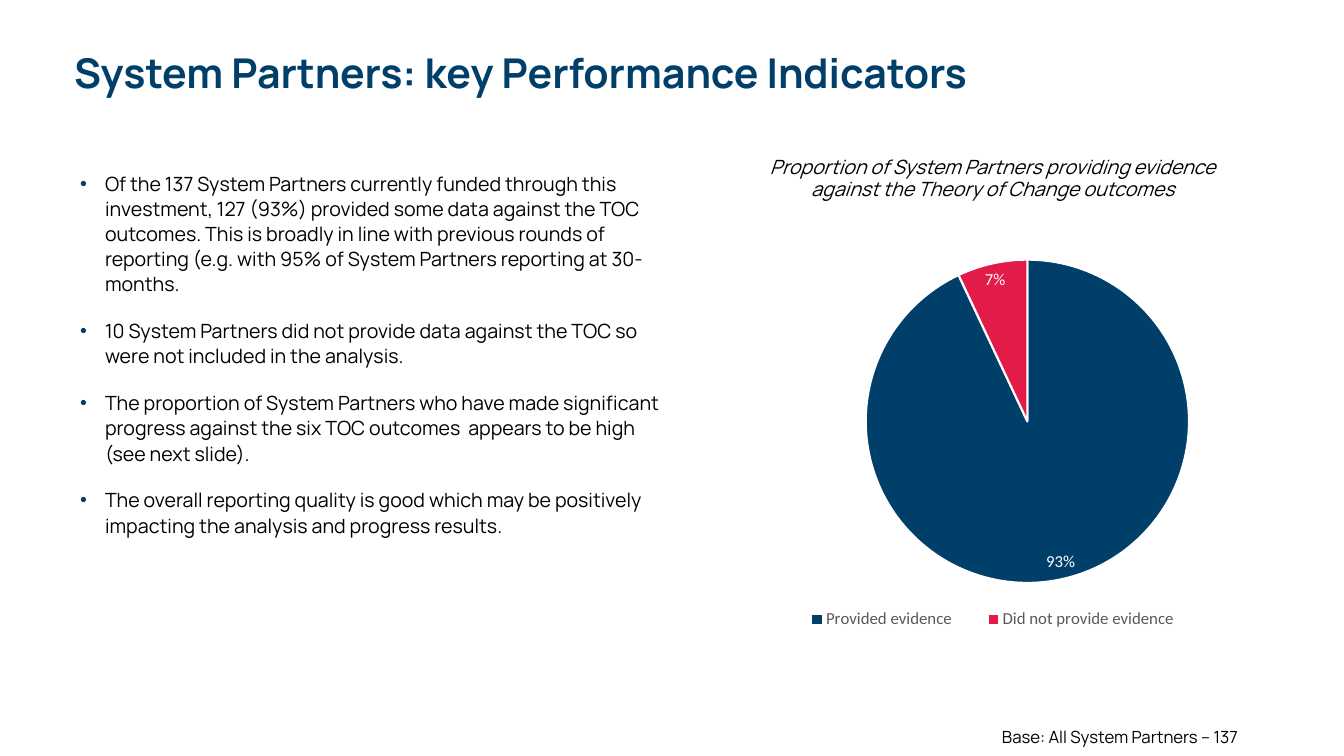
import dataclasses
import typing

import lxml.etree
import pptx
import pptx.chart.data
import pptx.dml.color
import pptx.enum.chart
import pptx.enum.text
import pptx.oxml.ns
import pptx.util

RGB = pptx.dml.color.RGBColor.from_string
ALIGN = pptx.enum.text.PP_ALIGN
ANCHOR = pptx.enum.text.MSO_ANCHOR
LABEL_POS = pptx.enum.chart.XL_LABEL_POSITION
EMU_PER_PX = 12192000 / 1344


@dataclasses.dataclass(frozen=True)
class Theme:
    navy: str = "003F69"
    bullet: str = "004069"
    red: str = "E31B49"
    black: str = "000000"
    grey: str = "595959"
    white: str = "FFFFFF"
    text_font: str = "Manrope"
    chart_font: str = "Calibri"
    title_size: float = 29.3
    body_size: float = 14
    small_size: float = 12


THEME = Theme()


@dataclasses.dataclass(frozen=True)
class Box:
    left: int
    top: int
    width: int
    height: int

    def emu(self) -> list[int]:
        return [px(v) for v in dataclasses.astuple(self)]


@dataclasses.dataclass(frozen=True)
class TextBlock:
    box: Box
    paragraphs: tuple[str, ...]
    size: float
    line_spacing: float
    color: str = THEME.black
    bold: bool = False
    italic: bool = False
    align: ALIGN = ALIGN.LEFT
    anchor: ANCHOR = ANCHOR.TOP
    inset: tuple[int, int] = (0, 0)
    bulleted: bool = False
    before: float = 0
    after: float = 0


@dataclasses.dataclass(frozen=True)
class Slice:
    name: str
    value: int
    color: str


BLOCKS = (
    TextBlock(Box(64, 47, 1094, 56), ("System Partners: key Performance Indicators",),
              THEME.title_size, 0.9, color=THEME.navy, bold=True,
              anchor=ANCHOR.MIDDLE, inset=(10, 5)),
    TextBlock(Box(80, 170, 592, 487), (
        "Of the 137 System Partners currently funded through this investment, 127 (93%) "
        "provided some data against the TOC outcomes. This is broadly in line with previous "
        "rounds of reporting (e.g. with 95% of System Partners reporting at 30-months.",
        "10 System Partners did not provide data against the TOC so were not included in "
        "the analysis.",
        "The proportion of System Partners who have made significant progress against the "
        "six TOC outcomes  appears to be high (see next slide).",
        "The overall reporting quality is good which may be positively impacting the "
        "analysis and progress results.",
    ), THEME.body_size, 1.07, bulleted=True, before=7.5, after=8),
    TextBlock(Box(728, 153, 530, 53),
              ("Proportion of System Partners providing evidence against the Theory of "
               "Change outcomes",),
              THEME.body_size, 0.9, italic=True, align=ALIGN.CENTER, inset=(10, 5)),
    TextBlock(Box(1002, 725, 318, 21), ("Base: All System Partners – 137",),
              THEME.small_size, 1.1),
)

CHART_BOX = Box(728, 203, 530, 455)
PLOT_LAYOUT = (0.26, 0.08, 0.61, 0.8)
LEGEND_LAYOUT = (0.1, 0.88, 0.8, 0.07)
SLICES = (
    Slice("Provided evidence", 93, THEME.navy),
    Slice("Did not provide evidence", 7, THEME.red),
)


def px(value: int) -> int:
    return round(value * EMU_PER_PX)


def child(parent: typing.Any, tag: str, **attrs: str) -> typing.Any:
    return lxml.etree.SubElement(parent, pptx.oxml.ns.qn(tag), attrs)


def style_font(font: typing.Any, name: str, size: float, color: str) -> None:
    font.name = name
    font.size = pptx.util.Pt(size)
    font.color.rgb = RGB(color)


def add_bullet(p: typing.Any) -> None:
    ppr = p._p.get_or_add_pPr()
    indent = px(25)
    ppr.set("marL", str(indent))
    ppr.set("indent", str(-indent))
    child(child(ppr, "a:buClr"), "a:srgbClr", val=THEME.bullet)
    child(ppr, "a:buFont", typeface="Arial")
    child(ppr, "a:buChar", char="•")


def add_text(s: typing.Any, block: TextBlock) -> None:
    tf = s.shapes.add_textbox(*block.box.emu()).text_frame
    tf.word_wrap = True
    tf.vertical_anchor = block.anchor
    tf.margin_left = tf.margin_right = px(block.inset[0])
    tf.margin_top = tf.margin_bottom = px(block.inset[1])
    for i, text in enumerate(block.paragraphs):
        p = tf.add_paragraph() if i else tf.paragraphs[0]
        if block.bulleted:
            add_bullet(p)
        p.alignment = block.align
        p.line_spacing = block.line_spacing
        p.space_before = pptx.util.Pt(block.before if i else 0)
        p.space_after = pptx.util.Pt(block.after)
        r = p.add_run()
        r.text = text
        style_font(r.font, THEME.text_font, block.size, block.color)
        r.font.bold = block.bold
        r.font.italic = block.italic


def set_layout(parent: typing.Any, index: int, inner: bool,
               fractions: tuple[float, ...]) -> None:
    for old in parent.findall(pptx.oxml.ns.qn("c:layout")):
        parent.remove(old)
    layout = child(parent, "c:layout")
    parent.insert(index, layout)
    manual = child(layout, "c:manualLayout")
    if inner:
        child(manual, "c:layoutTarget", val="inner")
    child(manual, "c:xMode", val="edge")
    child(manual, "c:yMode", val="edge")
    for key, value in zip("xywh", fractions):
        child(manual, f"c:{key}", val=str(value))


def add_pie(s: typing.Any) -> None:
    data = pptx.chart.data.CategoryChartData(number_format='0"%"')
    data.categories = [item.name for item in SLICES]
    data.add_series("Series 1", [item.value for item in SLICES])
    chart = s.shapes.add_chart(
        pptx.enum.chart.XL_CHART_TYPE.PIE, *CHART_BOX.emu(), data).chart
    chart.has_title = False
    style_font(chart.font, THEME.chart_font, THEME.small_size, THEME.black)

    chart.has_legend = True
    legend = chart.legend
    legend.position = pptx.enum.chart.XL_LEGEND_POSITION.BOTTOM
    legend.include_in_layout = False
    style_font(legend.font, THEME.chart_font, THEME.small_size, THEME.grey)
    set_layout(legend._element, 1, False, LEGEND_LAYOUT)
    set_layout(chart._chartSpace.chart.plotArea, 0, True, PLOT_LAYOUT)

    plot = chart.plots[0]
    plot.vary_by_categories = True
    for i, item in enumerate(SLICES):
        fmt = plot.series[0].points[i].format
        fmt.fill.solid()
        fmt.fill.fore_color.rgb = RGB(item.color)
        fmt.line.color.rgb = RGB(THEME.white)
        fmt.line.width = pptx.util.Pt(1.5)
    labels = plot.series[0].data_labels
    labels.show_value = True
    labels.number_format = '0"%"'
    labels.number_format_is_linked = False
    labels.position = LABEL_POS.BEST_FIT
    style_font(labels.font, THEME.chart_font, THEME.small_size, THEME.white)
    labels.font.bold = False


def main() -> None:
    prs = pptx.Presentation()
    prs.slide_width, prs.slide_height = px(1344), px(756)
    s = prs.slides.add_slide(prs.slide_layouts[6])
    add_pie(s)
    for block in BLOCKS:
        add_text(s, block)
    prs.save("out.pptx")


if __name__ == "__main__":
    main()
